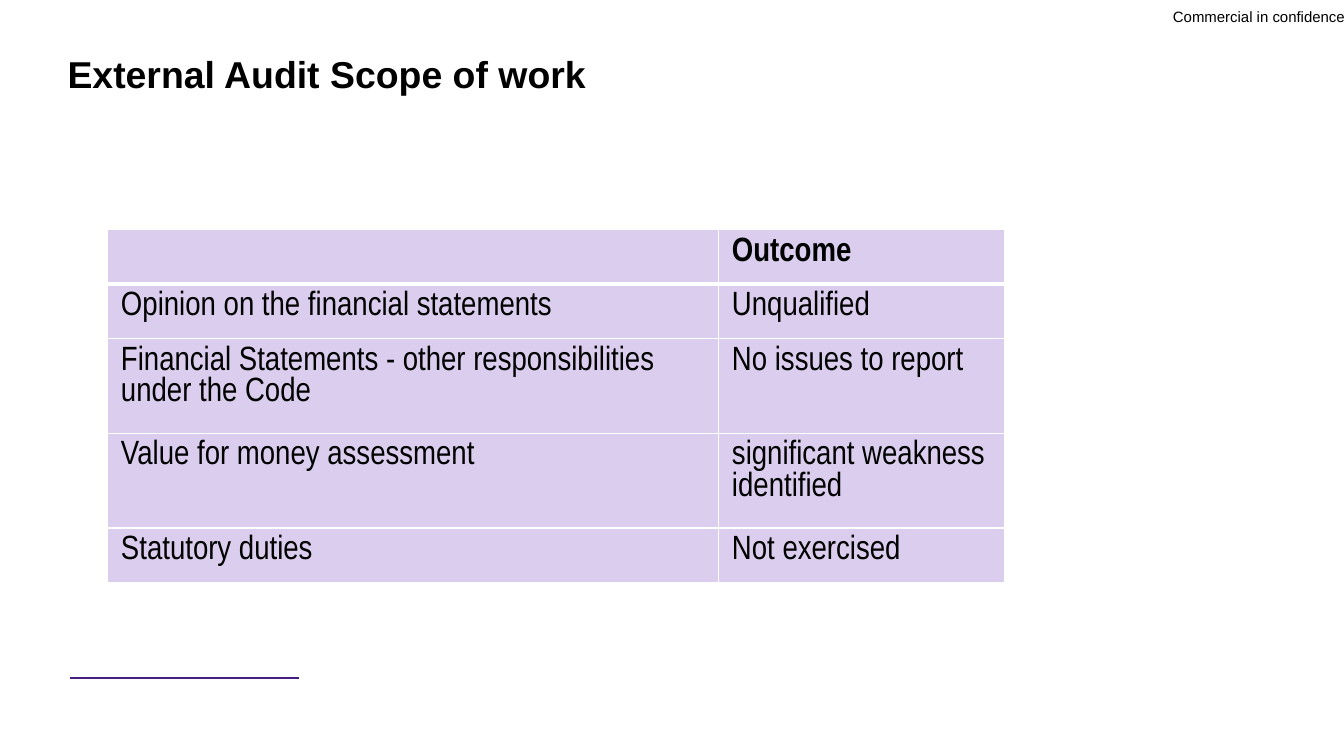
from lxml.etree import SubElement
from pptx import Presentation
from pptx.dml.color import RGBColor
from pptx.enum.shapes import MSO_CONNECTOR
from pptx.enum.text import MSO_ANCHOR, MSO_AUTO_SIZE, PP_ALIGN
from pptx.oxml import parse_xml
from pptx.oxml.ns import nsdecls, qn
from pptx.util import Inches, Pt

BLACK = RGBColor(0x00, 0x00, 0x00)
LILAC = RGBColor(0xDA, 0xCD, 0xED)
PURPLE = RGBColor(0x47, 0x1E, 0x82)
WHITE = RGBColor(0xFF, 0xFF, 0xFF)


def add_run(paragraph, text, font_name, size, bold=False):
    run = paragraph.add_run()
    run.text = text
    run.font.name = font_name
    run.font.size = Pt(size)
    run.font.bold = bold
    run.font.color.rgb = BLACK


def add_text(left, top, width, height):
    frame = slide.shapes.add_textbox(
        Inches(left), Inches(top), Inches(width), Inches(height)).text_frame
    frame.margin_left = frame.margin_right = 0
    frame.margin_top = frame.margin_bottom = 0
    return frame


prs = Presentation()
prs.slide_width = Inches(13.33)
prs.slide_height = Inches(7.5)
slide = prs.slides.add_slide(prs.slide_layouts[6])

# Confidentiality marking
marking = add_text(11.25, 0.07, 2.09, 0.18)
marking.word_wrap = False
marking.auto_size = MSO_AUTO_SIZE.SHAPE_TO_FIT_TEXT
marking.vertical_anchor = MSO_ANCHOR.MIDDLE
marking.paragraphs[0].alignment = PP_ALIGN.RIGHT
add_run(marking.paragraphs[0], "Commercial in confidence", "Arial", 10.7)

# Footer rule
footer_rule = slide.shapes.add_connector(
    MSO_CONNECTOR.STRAIGHT, Inches(0.69), Inches(6.73), Inches(2.97), Inches(6.73))
footer_rule.line.color.rgb = PURPLE
footer_rule.line.width = Pt(1.5)
SubElement(footer_rule._element.spPr, qn("a:effectLst"))

# Title
title = add_text(0.67, 0.58, 12, 1.02)
title.word_wrap = True
title.paragraphs[0].line_spacing = 0.85
add_run(title.paragraphs[0], "External Audit Scope of work", "Arial", 26.7, True)

# Audit outcomes
outcomes = [
    ("", "Outcome"),
    ("Opinion on the financial statements", "Unqualified"),
    ("Financial Statements - other responsibilities under the Code",
     "No issues to report"),
    ("Value for money assessment", "significant weakness identified"),
    ("Statutory duties", "Not exercised"),
]
column_widths = [6.06, 2.83]
row_heights = [0.54, 0.54, 0.93, 0.93, 0.54]
outcome_table = slide.shapes.add_table(
    len(outcomes), len(column_widths), Inches(1.07), Inches(2.28),
    Inches(sum(column_widths)), Inches(sum(row_heights))).table
for column, width in zip(outcome_table.columns, column_widths):
    column.width = Inches(width)
for row, height in zip(outcome_table.rows, row_heights):
    row.height = Inches(height)

for r, entries in enumerate(outcomes):
    for c, entry in enumerate(entries):
        cell = outcome_table.cell(r, c)
        cell.margin_left = cell.margin_right = Inches(0.13)
        cell.margin_top = cell.margin_bottom = Inches(0.07)
        cell.fill.solid()
        cell.fill.fore_color.rgb = LILAC
        if entry:
            add_run(cell.text_frame.paragraphs[0], entry, "Arial Narrow", 24, r == 0)

        # White borders, thicker under the header row
        border_widths = {"lnL": 1, "lnR": 1,
                         "lnT": 3 if r == 1 else 1, "lnB": 3 if r == 0 else 1}
        properties = cell._tc.get_or_add_tcPr()
        for position, (side, width) in enumerate(border_widths.items()):
            properties.insert(position, parse_xml(
                f'<a:{side} {nsdecls("a")} w="{Pt(width)}"><a:solidFill>'
                f'<a:srgbClr val="{WHITE}"/></a:solidFill></a:{side}>'))

prs.save("out.pptx")
